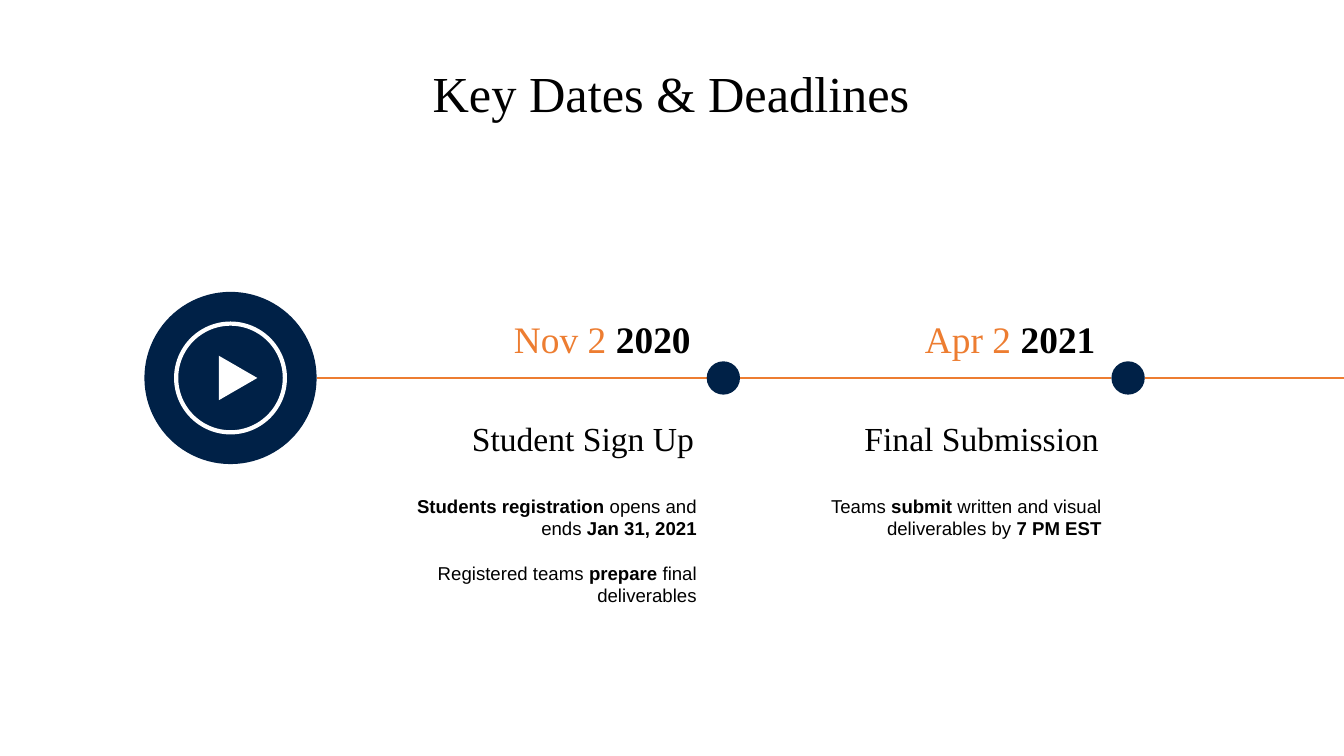
from dataclasses import dataclass

from pptx import Presentation
from pptx.dml.color import RGBColor
from pptx.enum import shapes, text
from pptx.oxml import ns
from pptx.util import Cm, Pt
from lxml import etree


@dataclass(frozen=True)
class Theme:
    navy: RGBColor = RGBColor(0x00, 0x21, 0x47)
    orange: RGBColor = RGBColor(0xED, 0x7D, 0x31)
    black: RGBColor = RGBColor(0, 0, 0)
    white: RGBColor = RGBColor(255, 255, 255)
    serif: str = "Times New Roman"
    sans: str = "Arial"
    title: float = 36
    date: float = 26.7
    heading: float = 24
    body: float = 13.3


THEME = Theme()
SLIDE_W, SLIDE_H = 33.87, 19.05
AXIS_Y = SLIDE_H / 2
START_X, START_SIZE = 5.81, 4.34
FIRST_DOT_X, DOT_PITCH, DOT_SIZE = 18.23, 10.2, 0.84

# Detail paragraphs are lists of (text, bold) runs.
MILESTONES = [
    ("Nov 2 ", "2020", "Student Sign Up", [
        [("Students registration ", True), ("opens and ends ", False),
         ("Jan 31, 2021", True)],
        [("Registered teams ", False), ("prepare ", True),
         ("final deliverables", False)],
    ]),
    ("Apr 2 ", "2021", "Final Submission", [
        [("Teams", False), (" submit", True),
         (" written and visual deliverables by ", False), ("7 PM EST", True)],
    ]),
]


def add_centred(slide, kind, x, w, h, fill, outline=None):
    """Add a preset shape centred on the timeline axis at x."""
    sp = slide.shapes.add_shape(
        kind, Cm(x - w / 2), Cm(AXIS_Y - h / 2), Cm(w), Cm(h))
    sp.shadow.inherit = False
    sp.fill.solid()
    sp.fill.fore_color.rgb = fill
    if outline is None:
        sp.line.fill.background()
    else:
        sp.line.color.rgb = outline
        sp.line.width = Pt(3)
    return sp


def add_segment(slide, x1, x2):
    line = slide.shapes.add_connector(
        shapes.MSO_CONNECTOR.STRAIGHT, Cm(x1), Cm(AXIS_Y), Cm(x2), Cm(AXIS_Y))
    line.line.color.rgb = THEME.orange
    line.line.width = Pt(2)
    etree.SubElement(line._element.spPr, ns.qn("a:effectLst"))


def add_right_text(slide, right, top, w, h, paragraphs, font, size):
    """Add right-aligned text; each run is (text, bold, colour)."""
    box = slide.shapes.add_textbox(Cm(right - w), Cm(top), Cm(w), Cm(h))
    tf = box.text_frame
    tf.word_wrap = True
    for i, runs in enumerate(paragraphs):
        p = tf.add_paragraph() if i else tf.paragraphs[0]
        p.alignment = text.PP_ALIGN.RIGHT
        p.font.name, p.font.size = font, Pt(size)
        if i:
            p.space_before = Pt(16)
        for words, bold, colour in runs:
            r = p.add_run()
            r.text = words
            r.font.bold = bold
            r.font.color.rgb = colour


def set_title(slide, words):
    title = slide.shapes.title
    title.left, title.top = Cm(10.59), Cm(1.42)
    title.width, title.height = Cm(12.65), Cm(1.8)
    tf = title.text_frame
    tf.text = words
    tf.word_wrap = False
    tf.vertical_anchor = text.MSO_ANCHOR.MIDDLE
    p = tf.paragraphs[0]
    p.alignment = text.PP_ALIGN.CENTER
    p.font.name, p.font.size = THEME.serif, Pt(THEME.title)
    p.font.color.rgb = THEME.black


def add_start(slide):
    """Add the play button that opens the timeline."""
    oval = shapes.MSO_SHAPE.OVAL
    add_centred(slide, oval, START_X, START_SIZE, START_SIZE, THEME.navy)
    add_centred(slide, oval, START_X, 2.74, 2.74, THEME.navy, THEME.white)
    play = add_centred(slide, shapes.MSO_SHAPE.ISOSCELES_TRIANGLE,
                       6, 1.12, 0.97, THEME.white)
    play.rotation = 90


def add_milestone(slide, x, day, year, heading, details):
    add_centred(slide, shapes.MSO_SHAPE.OVAL, x, DOT_SIZE, DOT_SIZE, THEME.navy)
    right = x - DOT_SIZE / 2
    date = [(day, False, THEME.orange), (year, True, THEME.black)]
    add_right_text(slide, right - 0.15, 7.85, 6.5, 1.4, [date],
                   THEME.serif, THEME.date)
    add_right_text(slide, right - 0.07, 10.41, 7.09, 1.27,
                   [[(heading, False, THEME.black)]],
                   THEME.serif, THEME.heading)
    body = [[(words, bold, THEME.black) for words, bold in runs]
            for runs in details]
    add_right_text(slide, right, 12.34, 8.38, 1.4 * len(body), body,
                   THEME.sans, THEME.body)


def main():
    prs = Presentation()
    prs.slide_width, prs.slide_height = Cm(SLIDE_W), Cm(SLIDE_H)
    slide = prs.slides.add_slide(prs.slide_layouts[5])
    set_title(slide, "Key Dates & Deadlines")
    add_start(slide)
    line_start = START_X + START_SIZE / 2
    for i, milestone in enumerate(MILESTONES):
        x = FIRST_DOT_X + i * DOT_PITCH
        add_segment(slide, line_start, x - DOT_SIZE / 2)
        add_milestone(slide, x, *milestone)
        line_start = x + DOT_SIZE / 2
    add_segment(slide, line_start, SLIDE_W)
    prs.save("out.pptx")


if __name__ == "__main__":
    main()
